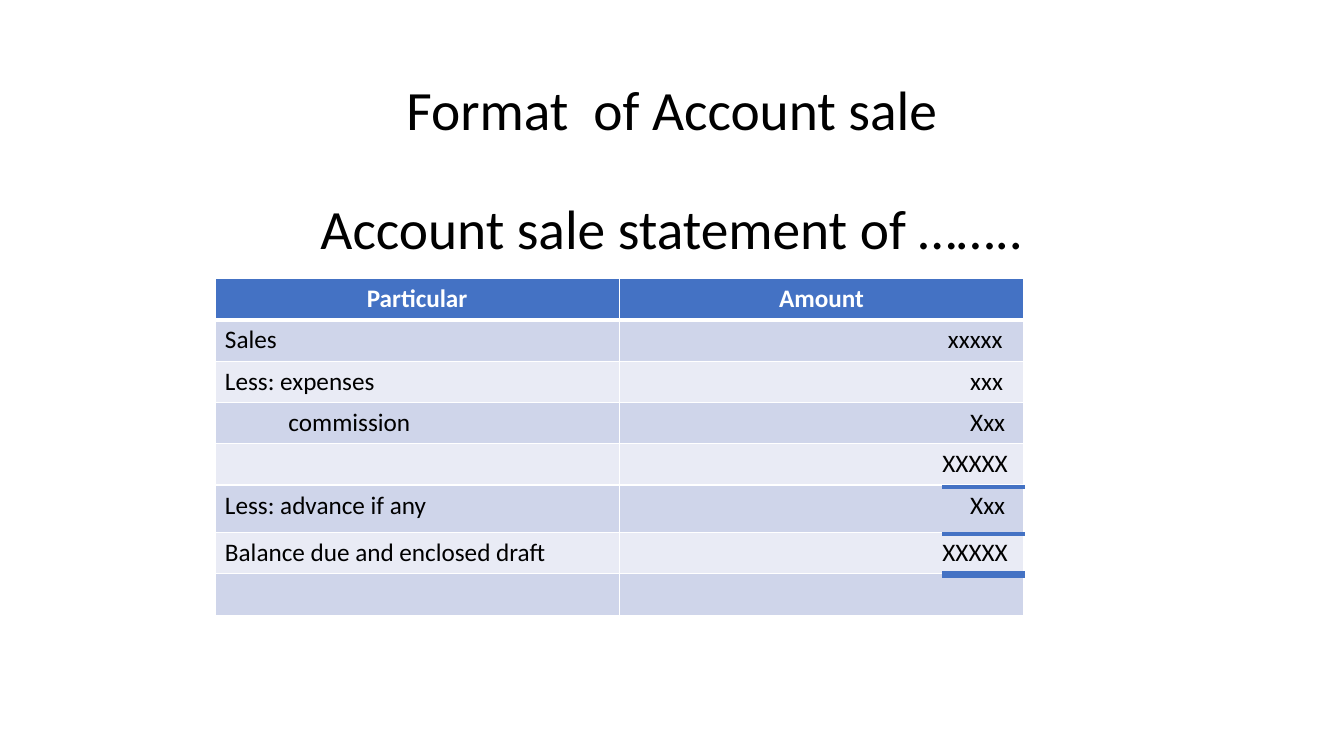
import dataclasses

import pptx
import pptx.dml.color
import pptx.enum.shapes
import pptx.enum.text
import pptx.oxml
import pptx.oxml.ns
import pptx.util

Cm = pptx.util.Cm
Pt = pptx.util.Pt
ALIGN = pptx.enum.text.PP_ALIGN


@dataclasses.dataclass(frozen=True)
class Theme:
    font: str = "Calibri"
    title_size: float = 39.6
    body_size: float = 18
    text: str = "000000"
    accent: str = "4472C4"
    white: str = "FFFFFF"
    bands: tuple = ("CFD5EA", "E9EBF5")


class SlideBuilder:
    def __init__(self, slide, theme):
        self.slide = slide
        self.theme = theme

    def color(self, value):
        return pptx.dml.color.RGBColor.from_string(value)

    def style(self, paragraph, size, color, bold=False, align=ALIGN.LEFT):
        paragraph.alignment = align
        for run in paragraph.runs:
            run.font.name = self.theme.font
            run.font.size = Pt(size)
            run.font.bold = bold
            run.font.color.rgb = self.color(color)

    def title(self, left, top, width, height, lines, inset, gap):
        shape = self.slide.shapes.add_textbox(Cm(left), Cm(top), Cm(width), Cm(height))
        text_frame = shape.text_frame
        text_frame.word_wrap = True
        text_frame.vertical_anchor = pptx.enum.text.MSO_ANCHOR.TOP
        text_frame.margin_top = Cm(inset)
        text_frame.text = "\n".join(lines)
        for index, paragraph in enumerate(text_frame.paragraphs):
            paragraph.line_spacing = 0.9
            paragraph.space_before = Pt(gap if index else 0)
            self.style(paragraph, self.theme.title_size, self.theme.text, align=ALIGN.CENTER)

    def borders(self, cell, bottom):
        properties = cell._tc.get_or_add_tcPr()
        for side, width in (("L", 1), ("R", 1), ("T", 1), ("B", bottom)):
            properties.append(pptx.oxml.parse_xml(
                f'<a:ln{side} {pptx.oxml.ns.nsdecls("a")} w="{Pt(width)}"><a:solidFill>'
                f'<a:srgbClr val="{self.theme.white}"/></a:solidFill></a:ln{side}>'
            ))

    def cell(self, cell, text, fill, color, indent=0.25, bold=False, align=ALIGN.LEFT, bottom=1):
        self.borders(cell, bottom)
        cell.fill.solid()
        cell.fill.fore_color.rgb = self.color(fill)
        cell.margin_left = Cm(indent)
        cell.text_frame.text = text
        self.style(cell.text_frame.paragraphs[0], self.theme.body_size, color, bold, align)

    def table(self, left, top, column_width, heights, headers, rows):
        theme = self.theme
        table = self.slide.shapes.add_table(
            len(heights), len(headers), Cm(left), Cm(top),
            Cm(column_width * len(headers)), Cm(sum(heights)),
        ).table
        for column in table.columns:
            column.width = Cm(column_width)
        for row, height in zip(table.rows, heights):
            row.height = Cm(height)
        for index, header in enumerate(headers):
            self.cell(table.cell(0, index), header, theme.accent, theme.white,
                      bold=True, align=ALIGN.CENTER, bottom=3)
        for row_index, row in enumerate(rows, start=1):
            band = theme.bands[(row_index - 1) % 2]
            for column_index, (text, indent) in enumerate(row):
                self.cell(table.cell(row_index, column_index), text, band, theme.text, indent)

    def rule(self, left, right, y, width):
        connector = self.slide.shapes.add_connector(
            pptx.enum.shapes.MSO_CONNECTOR.STRAIGHT, Cm(left), Cm(y), Cm(right), Cm(y)
        )
        connector.line.color.rgb = self.color(self.theme.accent)
        connector.line.width = Pt(width)
        properties = connector._element.spPr
        properties.append(pptx.oxml.parse_xml(f'<a:effectLst {pptx.oxml.ns.nsdecls("a")}/>'))


def main():
    presentation = pptx.Presentation()
    presentation.slide_width = Cm(33.87)
    presentation.slide_height = Cm(19.05)
    slide = presentation.slides.add_slide(presentation.slide_layouts[6])
    builder = SlideBuilder(slide, Theme())

    builder.title(2.33, 1.01, 29.21, 3.68,
                  ["Format  of Account sale", "Account sale statement of …….."],
                  inset=1.07, gap=42)

    margin = 0.25
    item = 8.84
    total = 8.14
    rows = [
        (("Sales", margin), ("xxxxx", 8.28)),
        (("Less: expenses", margin), ("xxx", item)),
        (("commission", 1.85), ("Xxx", item)),
        (("", margin), ("XXXXX", total)),
        (("Less: advance if any", margin), ("Xxx", item)),
        (("Balance due and enclosed draft", margin), ("XXXXX", total)),
        (("", margin), ("", margin)),
    ]
    heights = [1.04] * 5 + [1.2] + [1.04] * 2
    builder.table(5.42, 7.02, 10.19, heights, ["Particular", "Amount"], rows)

    for y, width in ((12.27, 3), (13.46, 3), (14.48, 4.5)):
        builder.rule(23.75, 25.83, y, width)

    presentation.save("out.pptx")


if __name__ == "__main__":
    main()
